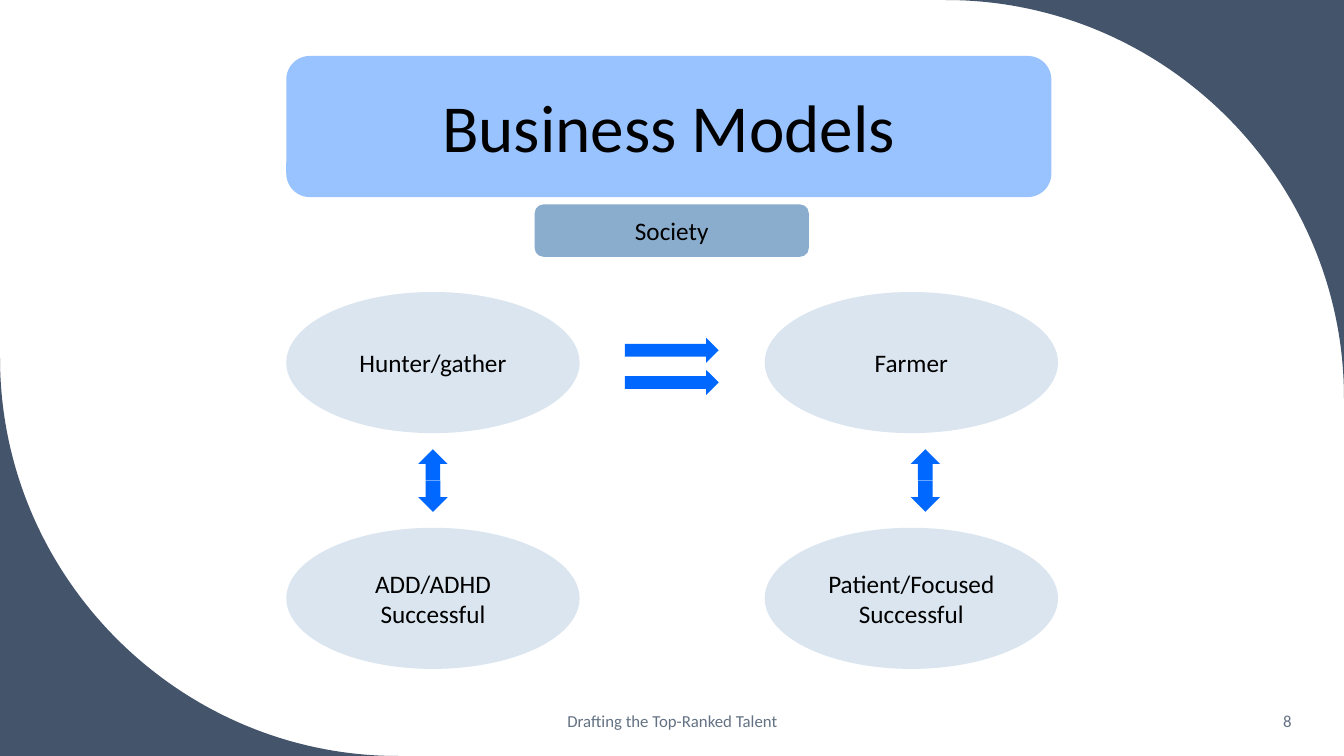
from lxml.etree import SubElement
from pptx import Presentation
from pptx.dml.color import RGBColor
from pptx.enum.shapes import MSO_SHAPE
from pptx.enum.text import MSO_ANCHOR, PP_ALIGN
from pptx.oxml.ns import qn
from pptx.util import Pt

COLOURS = {
    "corner": "44546A",
    "banner": "99C3FF",
    "society": "8AADCD",
    "oval": "DAE5EF",
    "arrow": "0068FF",
    "text": "000000",
    "footer": "637183",
}
PAGE_WIDTH, PAGE_HEIGHT = 960, 540
CORNER_SIZE = 284.4
QUARTER_CIRCLE = 0.55  # control point distance as a share of the radius


def paint(shape, colour):
    shape.shadow.inherit = False
    shape.fill.solid()
    shape.fill.fore_color.rgb = RGBColor.from_string(COLOURS[colour])
    shape.line.fill.background()


def add_figure(page, kind, box, colour, rotation=0):
    figure = page.shapes.add_shape(kind, *map(Pt, box))
    figure.rotation = rotation
    paint(figure, colour)


def write(shape, text, size=18, colour="text", align=PP_ALIGN.CENTER):
    frame = shape.text_frame
    frame.word_wrap = True
    frame.vertical_anchor = MSO_ANCHOR.MIDDLE
    frame.text = text
    for para in frame.paragraphs:
        para.alignment = align
        for span in para.runs:
            span.font.name = "Calibri"
            span.font.size = Pt(size)
            span.font.color.rgb = RGBColor.from_string(COLOURS[colour])


def add_label(page, box, text, **formatting):
    write(page.shapes.add_textbox(*map(Pt, box)), text, **formatting)


def add_corner(page, corner, arc_start, arc_end):
    """Fill a page corner up to a quarter circle."""
    points = [(Pt(x), Pt(y)) for x, y in (corner, arc_start, arc_end)]
    builder = page.shapes.build_freeform(*points[0], scale=1.0)
    builder.add_line_segments(points[1:], close=True)
    shape = builder.convert_to_shape()
    paint(shape, "corner")

    # Bend the straight side between the two arc ends
    side = list(shape.element.iter(qn("a:lnTo")))[1]
    side.tag = qn("a:cubicBezTo")
    end = side[0]
    local = [(x - shape.left, y - shape.top) for x, y in points]
    for tangent_point in local[1:]:
        x, y = (round(p + (c - p) * QUARTER_CIRCLE)
                for p, c in zip(tangent_point, local[0]))
        SubElement(side, qn("a:pt"), x=str(x), y=str(y))
    side.append(end)


def add_heading(page, box, text):
    left, top, width, height = box
    add_figure(page, MSO_SHAPE.ROUNDED_RECTANGLE, box, "banner")
    title = page.shapes.title
    title.left, title.width = Pt(left), Pt(width)
    title.top, title.height = Pt(top + 17), Pt(65.5)
    write(title, text, size=48)
    # Bring the title in front of its banner
    title.element.getparent().append(title.element)


def add_society(page, box):
    left, top, width, height = box
    add_figure(page, MSO_SHAPE.ROUNDED_RECTANGLE, box, "society")
    add_label(page, (left, top + (height - 29) / 2, width, 29), "Society")


def add_oval(page, box, text):
    left, top, width, height = box
    add_figure(page, MSO_SHAPE.OVAL, box, "oval")
    label_width, label_height = 145.4, 29 + 22 * text.count("\n")
    add_label(page, (left + (width - label_width) / 2,
                     top + (height - label_height) / 2,
                     label_width, label_height), text)


def add_model(page, box, names, arrow_shift=0):
    """Place two ovals, one above the other, with a two-way arrow between."""
    left, top, width, height = box
    oval_height = 100.8
    add_oval(page, (left, top, width, oval_height), names[0])
    add_oval(page, (left, top + height - oval_height, width, oval_height), names[1])
    arrow_width, arrow_height = 22.3, 20.9
    arrow_left = left + (width - arrow_width) / 2 + arrow_shift
    for offset, rotation in ((113, 270), (135.4, 90)):
        add_figure(page, MSO_SHAPE.RIGHT_ARROW,
                   (arrow_left, top + offset, arrow_width, arrow_height),
                   "arrow", rotation)


def add_transition(page, box):
    left, top, width, height = box
    arrow_height = 18
    for arrow_top in (top, top + height - arrow_height):
        add_figure(page, MSO_SHAPE.RIGHT_ARROW,
                   (left, arrow_top, width, arrow_height), "arrow")


def add_footer(page, box):
    left, top, width, height = box
    add_label(page, (left, top, 324, height), "Drafting the Top-Ranked Talent",
              size=12, colour="footer")
    add_label(page, (left + width - 130.3, top, 130.3, height), "8",
              size=12, colour="footer", align=PP_ALIGN.RIGHT)


def main():
    deck = Presentation()
    deck.slide_width, deck.slide_height = Pt(PAGE_WIDTH), Pt(PAGE_HEIGHT)
    page = deck.slides.add_slide(deck.slide_layouts[5])

    # Background corners
    add_corner(page, (PAGE_WIDTH, 0), (PAGE_WIDTH - CORNER_SIZE, 0),
               (PAGE_WIDTH, CORNER_SIZE))
    add_corner(page, (0, PAGE_HEIGHT), (CORNER_SIZE, PAGE_HEIGHT),
               (0, PAGE_HEIGHT - CORNER_SIZE))

    # Heading and topic
    add_heading(page, (204.5, 40, 546.5, 100.8), "Business Models")
    add_society(page, (381.9, 146, 195.8, 37.4))

    # The two models and the step between them
    add_model(page, (204.5, 208.6, 209.5, 269.2),
              ("Hunter/gather", "ADD/ADHD\nSuccessful"))
    add_model(page, (546.2, 208.6, 209.5, 269.2),
              ("Farmer", "Patient/Focused\nSuccessful"), arrow_shift=10)
    add_transition(page, (446.4, 241.2, 67, 41))

    add_footer(page, (318.4, 500.4, 611.3, 28.8))
    deck.save("out.pptx")


if __name__ == "__main__":
    main()
